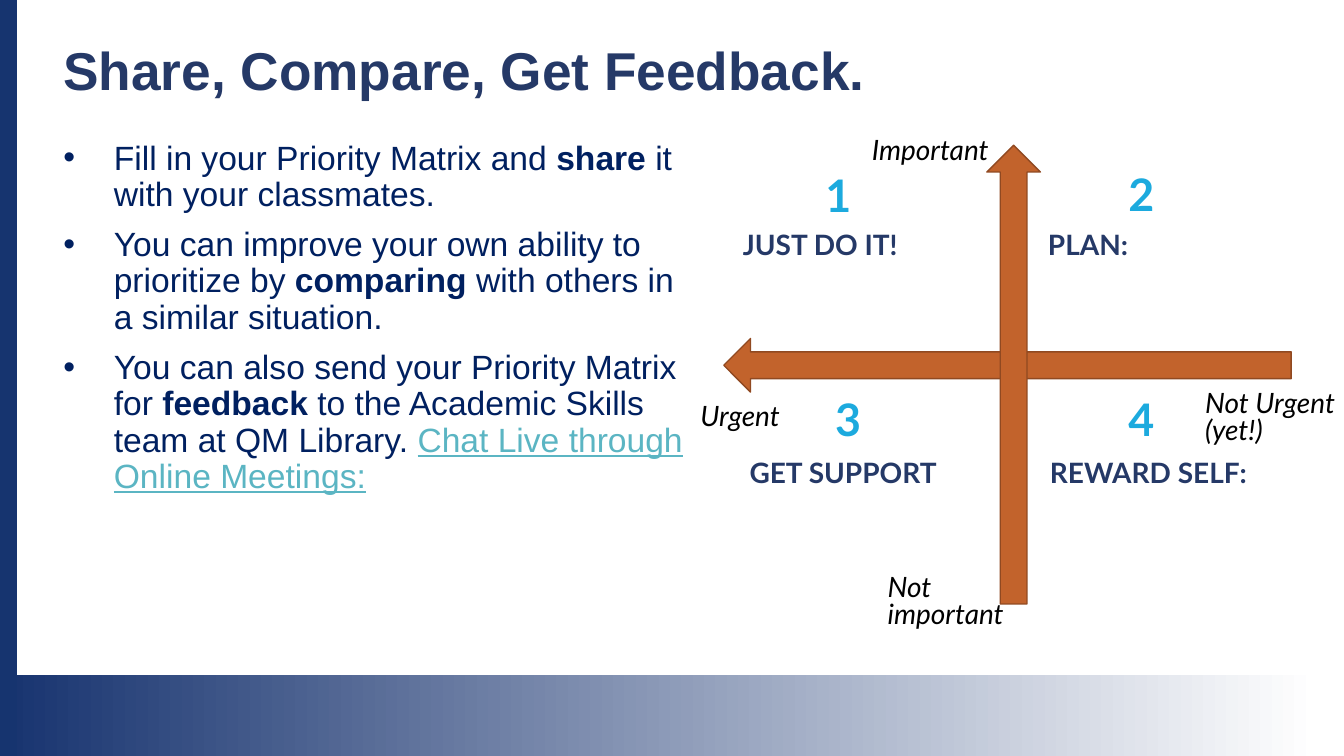
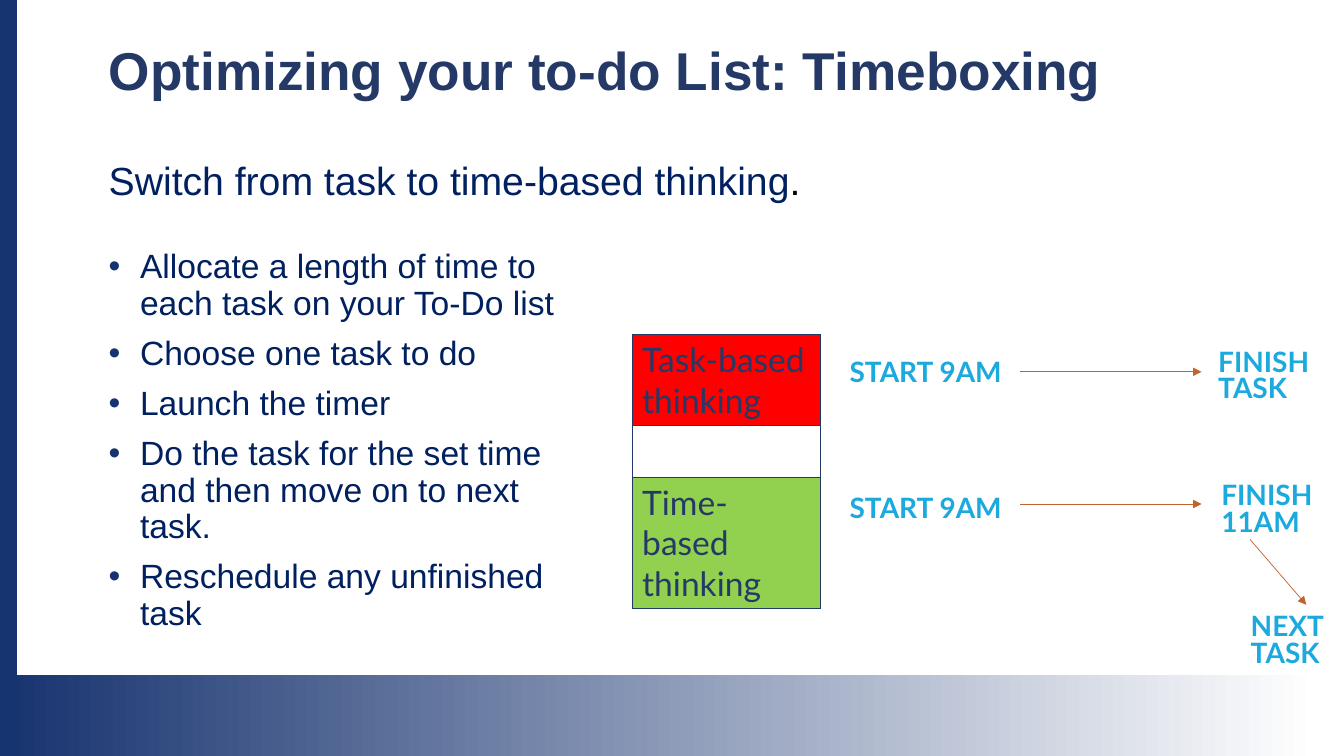
from dataclasses import dataclass
from typing import Iterable

from lxml import etree
from pptx import Presentation
from pptx.dml.color import RGBColor
from pptx.enum import shapes, text
from pptx.oxml import ns
from pptx.util import Cm, Pt

NAVY, INK, BAND = "253967", "002060", "16346F"
FADE, CYAN, LINK = "17336F", "1CAADE", "5BB5C3"
RUST, RUST_EDGE = "C2632C", "904921"
RED, GREEN, WHITE, BLACK = "FF0000", "92D050", "FFFFFF", "000000"
WIDTH, HEIGHT = 33.87, 19.05
FOOTER_TOP = 17.02


@dataclass(frozen=True)
class Span:
    text: str
    bold: bool = False
    color: str = ""
    underline: bool = False


@dataclass(frozen=True)
class Label:
    text: str
    left: float
    top: float
    width: float
    height: float = 0.97


@dataclass(frozen=True)
class Arrow:
    start: tuple[float, float]
    end: tuple[float, float]


@dataclass(frozen=True)
class Row:
    text: str
    height: float
    fill: str


Paragraph = list[Span]

AXIS_LABELS = [
    Label("Urgent", 17.4, 10.08, 4.72),
    Label("Not Urgent (yet!)", 30.12, 9.75, 4.72, 1.65),
    Label("Important", 21.72, 3.38, 4.72),
    Label("Not\nimportant", 22.12, 14.38, 3.71, 1.65),
]
QUADRANTS = [
    Label("JUST DO IT!", 18.47, 5.77, 6.93),
    Label("PLAN:", 26.16, 5.77, 6.93),
    Label("GET SUPPORT", 18.64, 11.53, 6.93),
    Label("REWARD SELF:", 26.21, 11.53, 7.52),
]
NUMBERS = [
    Label("1", 20.55, 4.37, 1.14, 1.37),
    Label("2", 28.19, 4.34, 1.14, 1.37),
    Label("3", 20.8, 10.01, 1.14, 1.37),
    Label("4", 28.19, 10.01, 1.14, 1.37),
]
FEEDBACK_STEPS = [
    [Span("Fill in your Priority Matrix and "), Span("share", bold=True),
     Span(" it with your classmates.")],
    [Span("You can improve your own ability to prioritize by "),
     Span("comparing", bold=True), Span(" with others in a similar situation.")],
    [Span("You can also send your Priority Matrix for "),
     Span("feedback", bold=True),
     Span(" to the Academic Skills team at QM Library. "),
     Span("Chat Live through Online Meetings:", color=LINK, underline=True)],
]
TIMEBOX_STEPS = [[Span(step)] for step in (
    "Allocate a length of time to each task on your To-Do list",
    "Choose one task to do",
    "Launch the timer",
    "Do the task for the set time and then move on to next task.",
    "Reschedule any unfinished task",
)]
THINKING_ROWS = [
    Row("Task-based thinking", 2.3, RED),
    Row("", 1.3, WHITE),
    Row("Time-based thinking", 3.3, GREEN),
]
TIMELINE = [
    Label("START 9AM", 21.16, 8.97, 4.57),
    Label("FINISH TASK", 30.45, 8.71, 3.43, 1.65),
    Label("START 9AM", 21.16, 12.4, 4.57),
    Label("FINISH 11AM", 30.53, 12.07, 3.43, 1.65),
    Label("NEXT TASK", 31.27, 15.37, 3.43, 1.65),
]
TIMELINE_ARROWS = [
    Arrow((25.7, 9.37), (30.28, 9.37)),
    Arrow((25.7, 12.7), (30.28, 12.7)),
    Arrow((31.5, 13.59), (32.92, 15.24)),
]


def rgb(color: str) -> RGBColor:
    return RGBColor.from_string(color)


def add_child(parent, tag: str, **attributes: str):
    return etree.SubElement(parent, ns.qn(tag), attributes)


def set_bullet(para, indent: float, color: str) -> None:
    properties = para._p.get_or_add_pPr()
    properties.set("marL", str(Cm(indent)))
    properties.set("indent", str(-Cm(indent)))
    add_child(add_child(properties, "a:buClr"), "a:srgbClr", val=color)
    add_child(properties, "a:buFont", typeface="Arial")
    add_child(properties, "a:buChar", char="•")


def add_text(page, paragraphs: Iterable[Paragraph], left: float, top: float,
             width: float, height: float, *, size: float, color: str,
             font: str = "Arial", bold: bool = False, italic: bool = False,
             spacing: float = 0.9, gap: float = 10, indent: float = 0,
             bullet_color: str = INK) -> None:
    box = page.shapes.add_textbox(Cm(left), Cm(top), Cm(width), Cm(height))
    frame = box.text_frame
    frame.word_wrap = True
    frame.vertical_anchor = text.MSO_ANCHOR.TOP
    for index, spans in enumerate(paragraphs):
        para = frame.add_paragraph() if index else frame.paragraphs[0]
        para.line_spacing = spacing
        para.space_before = Pt(gap if index else 0)
        if indent:
            set_bullet(para, indent, bullet_color)
        for span in spans:
            run = para.add_run()
            run.text = span.text
            run.font.name, run.font.size = font, Pt(size)
            run.font.bold, run.font.italic = bold or span.bold, italic
            run.font.underline = span.underline
            run.font.color.rgb = rgb(span.color or color)


def add_labels(page, labels: Iterable[Label], *, color: str, size: float = 20,
               bold: bool = True, italic: bool = False) -> None:
    for label in labels:
        lines = [[Span(line)] for line in label.text.split("\n")]
        add_text(page, lines, label.left, label.top, label.width, label.height,
                 size=size, color=color, font="Lato", bold=bold, italic=italic,
                 spacing=0.8, gap=0)


def add_block(page, kind, left: float, top: float, width: float, height: float,
              *, fill: str, fade: str = "", edge: str = ""):
    """Draw a preset shape; fade is the colour a left-to-right gradient ends in."""
    block = page.shapes.add_shape(kind, Cm(left), Cm(top), Cm(width), Cm(height))
    block.shadow.inherit = False
    if fade:
        block.fill.gradient()
        block.fill.gradient_angle = 0
        first, last = block.fill.gradient_stops
        first.color.rgb, first.position = rgb(fill), 0
        last.color.rgb, last.position = rgb(fade), 0.98
    else:
        block.fill.solid()
        block.fill.fore_color.rgb = rgb(fill)
    if edge:
        block.line.color.rgb = rgb(edge)
        block.line.width = Pt(1)
    else:
        block.line.fill.background()
    return block


def add_arrow(page, arrow: Arrow) -> None:
    points = [Cm(value) for value in (*arrow.start, *arrow.end)]
    line = page.shapes.add_connector(shapes.MSO_CONNECTOR.STRAIGHT, *points)
    line.line.color.rgb = rgb(RUST)
    line.line.width = Pt(0.5)
    add_child(line.line._get_or_add_ln(), "a:tailEnd", type="triangle")
    add_child(line._element.spPr, "a:effectLst")


def set_borders(cell, color: str) -> None:
    properties = cell._tc.get_or_add_tcPr()
    for side in ("a:lnL", "a:lnR", "a:lnT", "a:lnB"):
        border = add_child(properties, side, w=str(Pt(1)))
        add_child(add_child(border, "a:solidFill"), "a:srgbClr", val=color)


def add_thinking_table(page, left: float, top: float, width: float) -> None:
    height = sum(row.height for row in THINKING_ROWS)
    table = page.shapes.add_table(len(THINKING_ROWS), 1, Cm(left), Cm(top),
                                  Cm(width), Cm(height)).table
    table.first_row = table.horz_banding = False
    for index, row in enumerate(THINKING_ROWS):
        table.rows[index].height = Cm(row.height)
        cell = table.cell(index, 0)
        set_borders(cell, NAVY)
        cell.fill.solid()
        cell.fill.fore_color.rgb = rgb(row.fill)
        cell.text = row.text
        font = cell.text_frame.paragraphs[0].font
        font.name, font.size, font.bold = "Lato", Pt(24), False
        font.color.rgb = rgb(NAVY)


def add_page(deck, title: str, left: float, width: float):
    """Add a blank page with the footer, the side band and the title."""
    page = deck.slides.add_slide(deck.slide_layouts[6])
    rectangle = shapes.MSO_SHAPE.RECTANGLE
    add_block(page, rectangle, 0, FOOTER_TOP, WIDTH, HEIGHT - FOOTER_TOP,
              fill=FADE, fade=WHITE)
    add_block(page, rectangle, 0, 0, 0.43, HEIGHT, fill=BAND)
    add_text(page, [[Span(title)]], left, 0.99, width, 2.44,
             size=38, color=NAVY, bold=True)
    return page


def build_feedback_page(deck) -> None:
    page = add_page(deck, "Share, Compare, Get Feedback.", 1.35, 24.46)
    add_block(page, shapes.MSO_SHAPE.LEFT_ARROW, 18.24, 8.53, 14.3, 1.35,
              fill=RUST, edge=RUST_EDGE)
    add_block(page, shapes.MSO_SHAPE.UP_ARROW, 24.87, 3.66, 1.35, 11.56,
              fill=RUST, edge=RUST_EDGE)
    add_labels(page, AXIS_LABELS, color=BLACK, bold=False, italic=True)
    add_labels(page, QUADRANTS, color=NAVY)
    add_labels(page, NUMBERS, color=CYAN, size=32)
    add_text(page, FEEDBACK_STEPS, 1.35, 3.43, 16.38, 9.3,
             size=24, color=INK, indent=1.27)


def build_timeboxing_page(deck) -> None:
    page = add_page(deck, "Optimizing your to-do List: Timeboxing", 2.49, 26.82)
    intro = [Span("Switch from task to time-based thinking"), Span(".", color=BLACK)]
    add_text(page, [intro], 2.49, 3.94, 18.59, 1.63, size=28, color=INK)
    add_text(page, TIMEBOX_STEPS, 2.49, 6.17, 12.17, 9.9,
             size=24, color=INK, indent=0.79, bullet_color=FADE)
    add_thinking_table(page, 15.93, 8.43, 4.75)
    add_labels(page, TIMELINE, color=CYAN)
    for arrow in TIMELINE_ARROWS:
        add_arrow(page, arrow)


def main() -> None:
    deck = Presentation()
    deck.slide_width, deck.slide_height = Cm(WIDTH), Cm(HEIGHT)
    build_feedback_page(deck)
    build_timeboxing_page(deck)
    deck.save("out.pptx")


if __name__ == "__main__":
    main()
